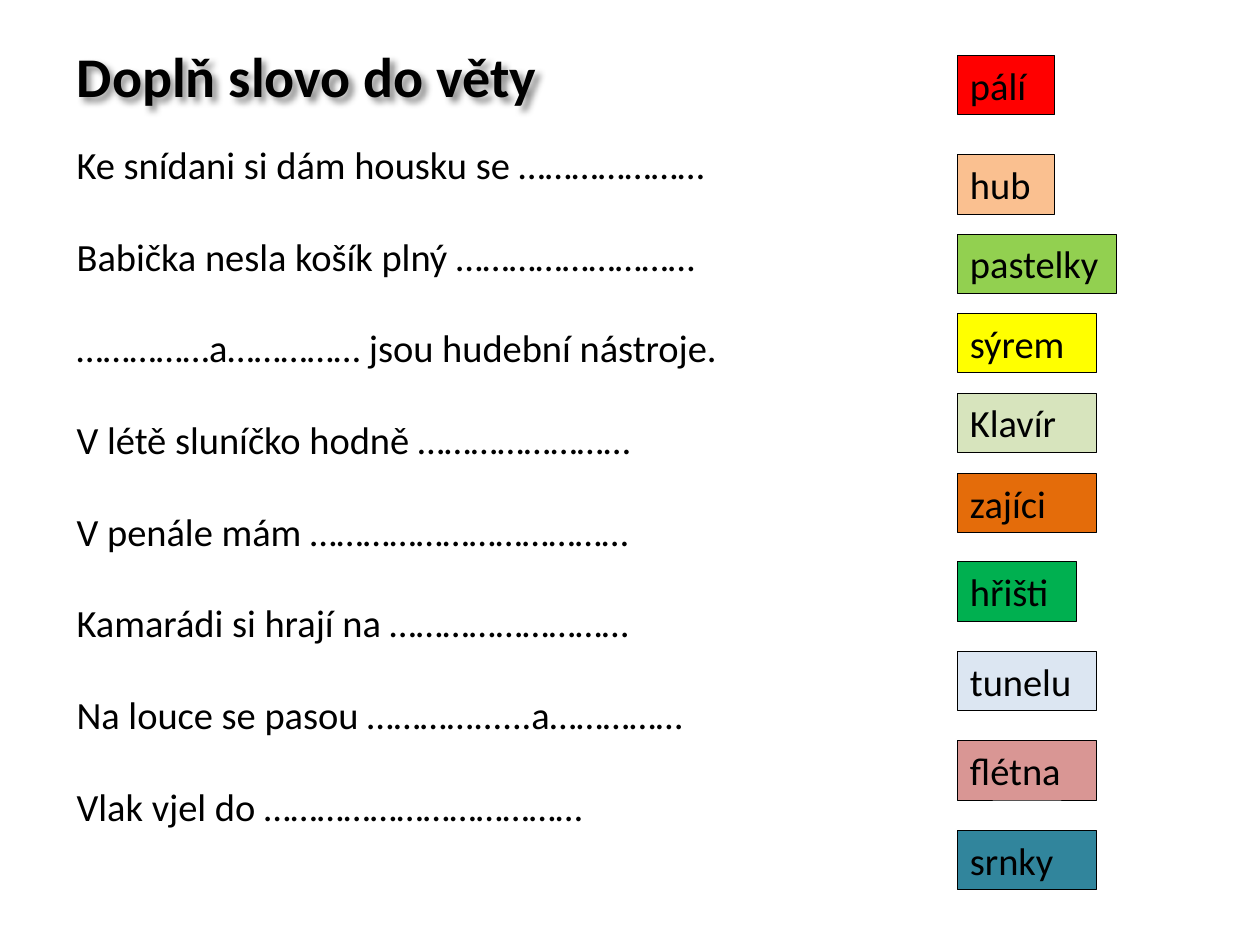
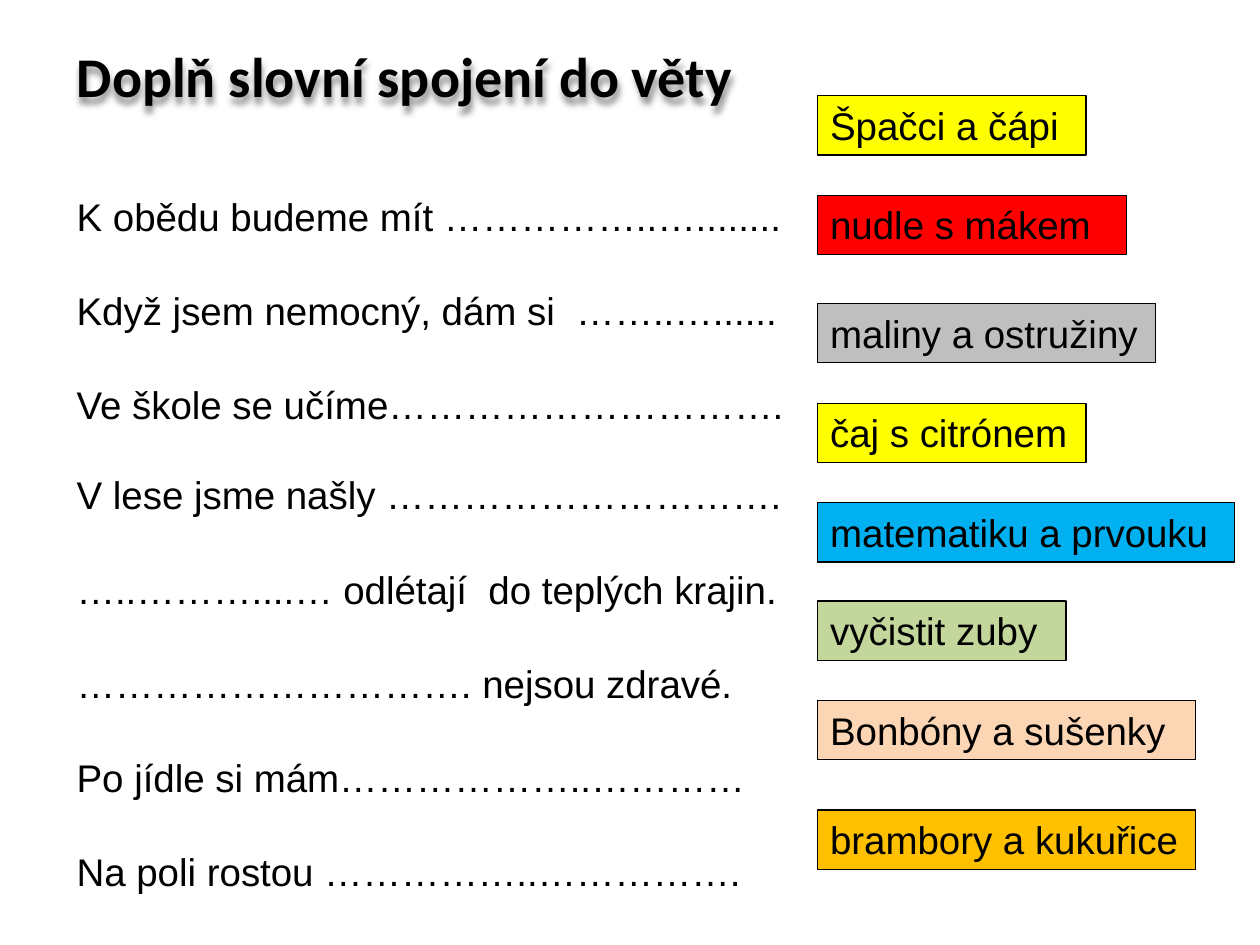
from dataclasses import dataclass

from lxml import etree
from pptx import Presentation
from pptx.dml.color import RGBColor
from pptx.enum.shapes import MSO_SHAPE
from pptx.enum.text import MSO_ANCHOR, PP_ALIGN
from pptx.oxml.ns import qn
from pptx.util import Inches, Pt

RECTANGLE = MSO_SHAPE.RECTANGLE
TOP, MIDDLE = MSO_ANCHOR.TOP, MSO_ANCHOR.MIDDLE
LEFT = PP_ALIGN.LEFT
TITLE_ONLY = 5


@dataclass(frozen=True)
class Theme:
    ink: str = "000000"
    red: str = "FF0000"
    yellow: str = "FFFF00"
    title_font: str = "Calibri"
    title_size: float = 32
    body_size: float = 22
    margin: float = 0.51
    title_top: float = 0.28
    title_height: float = 0.64
    label_height: float = 0.47


THEME = Theme()

WORD_SENTENCES = [
    "Ke snídani si dám housku se …………………",
    "Babička nesla košík plný ………………………",
    "……………a…………… jsou hudební nástroje.",
    "V létě sluníčko hodně ……………………",
    "V penále mám ………………………………",
    "Kamarádi si hrají na ………………………",
    "Na louce se pasou …………......a……………",
    "Vlak vjel do ………………………………",
]
PHRASE_SENTENCES = [
    "K obědu budeme mít ……………..…........",
    "Když jsem nemocný, dám si  ……..…......",
    "Ve škole se učíme………………………….",
    "V lese jsme našly ………………………….",
    "…..………....… odlétají  do teplých krajin.",
    "…………………………. nejsou zdravé.",
    "Po jídle si mám………………..…………",
    "Na poli rostou ……………..…………….",
]

# Labels: text, top, width, fill
WORD_LABELS = [
    ("pálí", 0.44, 0.77, THEME.red),
    ("hub", 1.23, 0.77, "FAC090"),
    ("pastelky", 1.86, 1.26, "92D050"),
    ("sýrem", 2.49, 1.1, THEME.yellow),
    ("Klavír", 3.12, 1.1, "D7E4BD"),
    ("zajíci", 3.76, 1.1, "E46C0A"),
    ("hřišti", 4.46, 0.94, "00B050"),
    ("tunelu", 5.17, 1.1, "DCE6F2"),
    ("flétna", 5.88, 1.1, "D99694"),
    ("srnky", 6.59, 1.1, "31859C"),
]
PHRASE_LABELS = [
    ("Špačci a čápi", 0.76, 2.13, THEME.yellow),
    ("nudle s mákem", 1.55, 2.45, THEME.red),
    ("maliny a ostružiny", 2.41, 2.68, "BFBFBF"),
    ("čaj s citrónem", 3.2, 2.13, THEME.yellow),
    ("matematiku a prvouku", 3.99, 3.31, "00B0F0"),
    ("vyčistit zuby", 4.77, 1.97, "C3D69B"),
    ("Bonbóny a sušenky", 5.56, 3, "FCD5B5"),
    ("brambory a kukuřice", 6.43, 3, "FFC000"),
]


def color(value):
    return RGBColor.from_string(value)


def format_paragraph(paragraph, font_name, size, bold=False):
    paragraph.alignment = LEFT
    for run in paragraph.runs:
        run.font.name = font_name
        run.font.size = Pt(size)
        run.font.bold = bold
        run.font.color.rgb = color(THEME.ink)


def add_soft_shadow(shape, degrees):
    """Cast a blurred shadow; an unfilled shape passes it to its text."""
    effects = etree.SubElement(shape._element.spPr, qn("a:effectLst"))
    shadow = etree.SubElement(
        effects, qn("a:outerShdw"), blurRad=str(Pt(4)), dist=str(Pt(3)),
        dir=str(degrees * 60000), algn="tl", rotWithShape="0")
    shade = etree.SubElement(shadow, qn("a:srgbClr"), val=THEME.ink)
    etree.SubElement(shade, qn("a:alpha"), val="43000")


def set_title(slide, text, width, shadow_degrees):
    title = slide.shapes.title
    title.left, title.top = Inches(THEME.margin), Inches(THEME.title_top)
    title.width, title.height = Inches(width), Inches(THEME.title_height)
    frame = title.text_frame
    frame.text = text
    frame.word_wrap = False
    frame.vertical_anchor = MIDDLE
    format_paragraph(frame.paragraphs[0], THEME.title_font, THEME.title_size, bold=True)
    add_soft_shadow(title, shadow_degrees)


def add_sentences(slide, sentences, top, width, height, font_name, gaps):
    """Write one sentence a paragraph; gaps are the points after each but the last."""
    box = slide.shapes.add_textbox(
        Inches(THEME.margin), Inches(top), Inches(width), Inches(height))
    frame = box.text_frame
    frame.text = "\n".join(sentences)
    frame.word_wrap = True
    frame.vertical_anchor = TOP
    for paragraph in frame.paragraphs:
        format_paragraph(paragraph, font_name, THEME.body_size)
    for paragraph, gap in zip(frame.paragraphs, gaps):
        paragraph.space_after = Pt(gap)


def add_labels(slide, labels, left, font_name, line_width):
    for text, top, width, fill in labels:
        label = slide.shapes.add_shape(
            RECTANGLE, Inches(left), Inches(top), Inches(width), Inches(THEME.label_height))
        label.shadow.inherit = False
        label.fill.solid()
        label.fill.fore_color.rgb = color(fill)
        label.line.color.rgb = color(THEME.ink)
        label.line.width = Pt(line_width)
        frame = label.text_frame
        frame.text = text
        frame.word_wrap = True
        frame.vertical_anchor = TOP
        format_paragraph(frame.paragraphs[0], font_name, THEME.body_size)


def add_title_slide(presentation):
    return presentation.slides.add_slide(presentation.slide_layouts[TITLE_ONLY])


def build_word_slide(presentation):
    slide = add_title_slide(presentation)
    add_sentences(slide, WORD_SENTENCES, 1.07, 5.59, 5.65, "Calibri", [26] * 7)
    set_title(slide, "Doplň slovo do věty", 3.98, shadow_degrees=45)
    add_labels(slide, WORD_LABELS, 7.6, "Calibri", 0.5)


def build_phrase_slide(presentation):
    slide = add_title_slide(presentation)
    gaps = [27.5, 27.5, 25, 27.5, 27.5, 27.5, 27.5]
    add_sentences(slide, PHRASE_SENTENCES, 1.48, 5.98, 5.89, "Arial", gaps)
    set_title(slide, "Doplň slovní spojení do věty", 5.55, shadow_degrees=90)
    add_labels(slide, PHRASE_LABELS, 6.49, "Arial", 0.75)


def main():
    presentation = Presentation()
    presentation.slide_width = Inches(10)
    presentation.slide_height = Inches(7.5)
    build_word_slide(presentation)
    build_phrase_slide(presentation)
    presentation.save("out.pptx")


if __name__ == "__main__":
    main()
